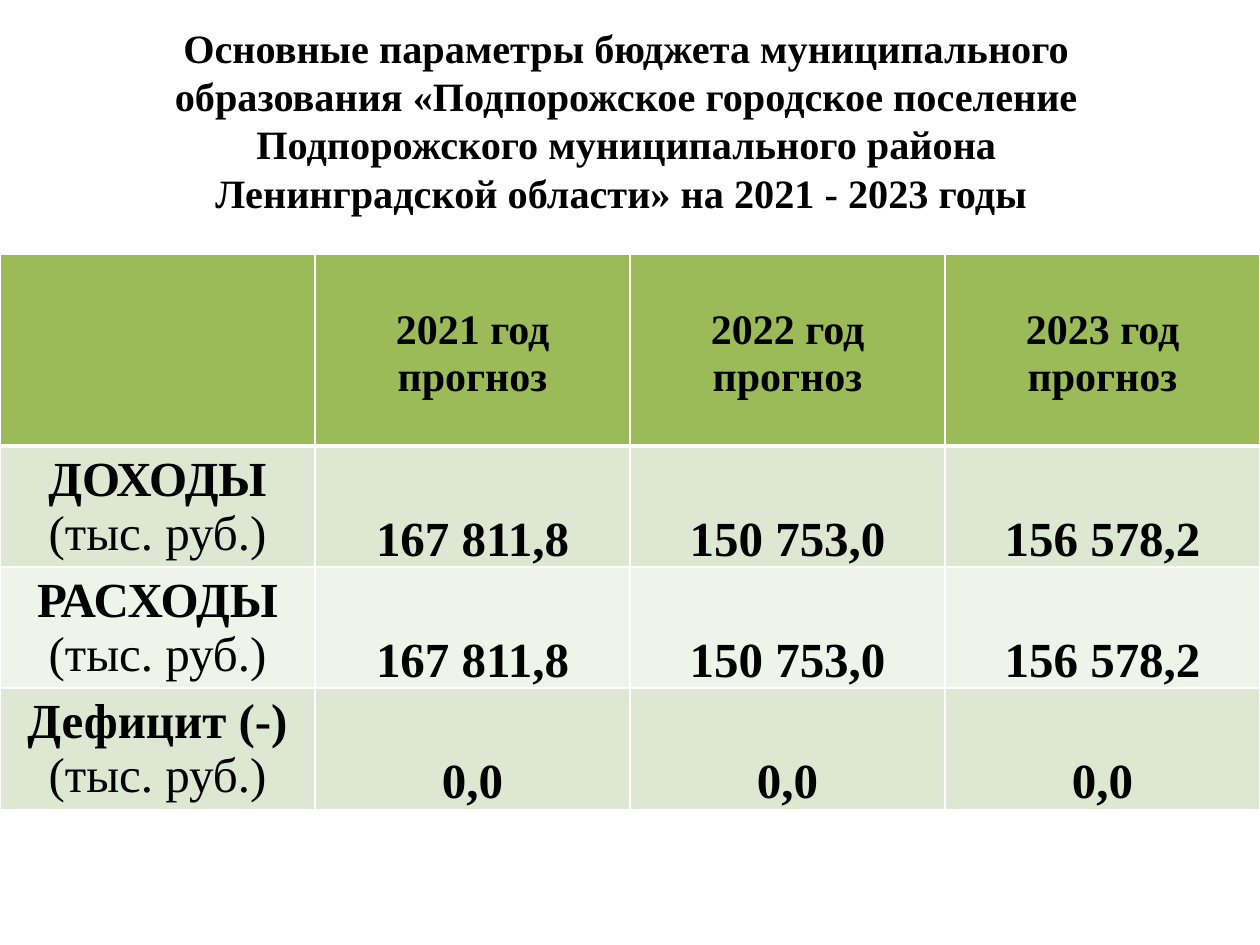
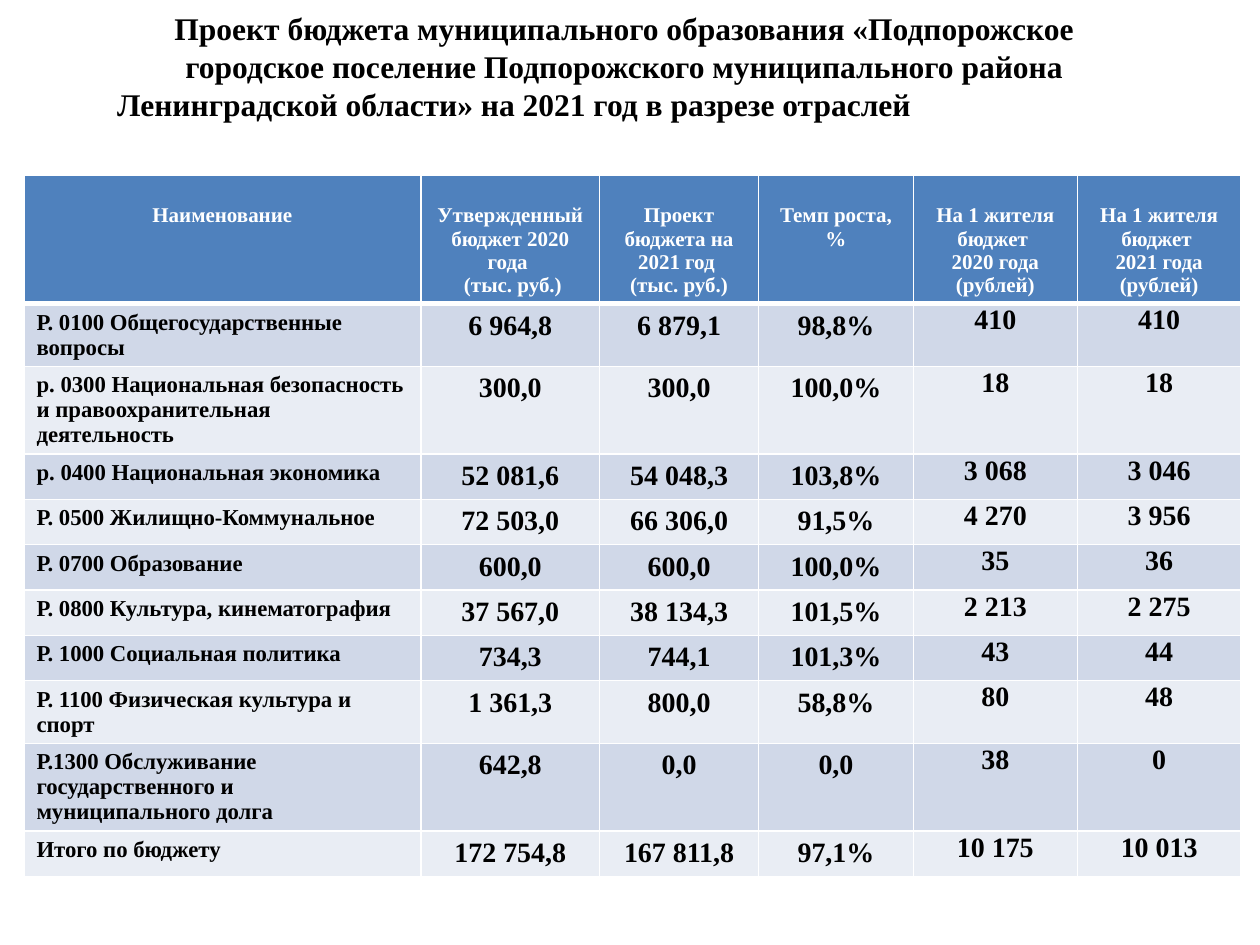
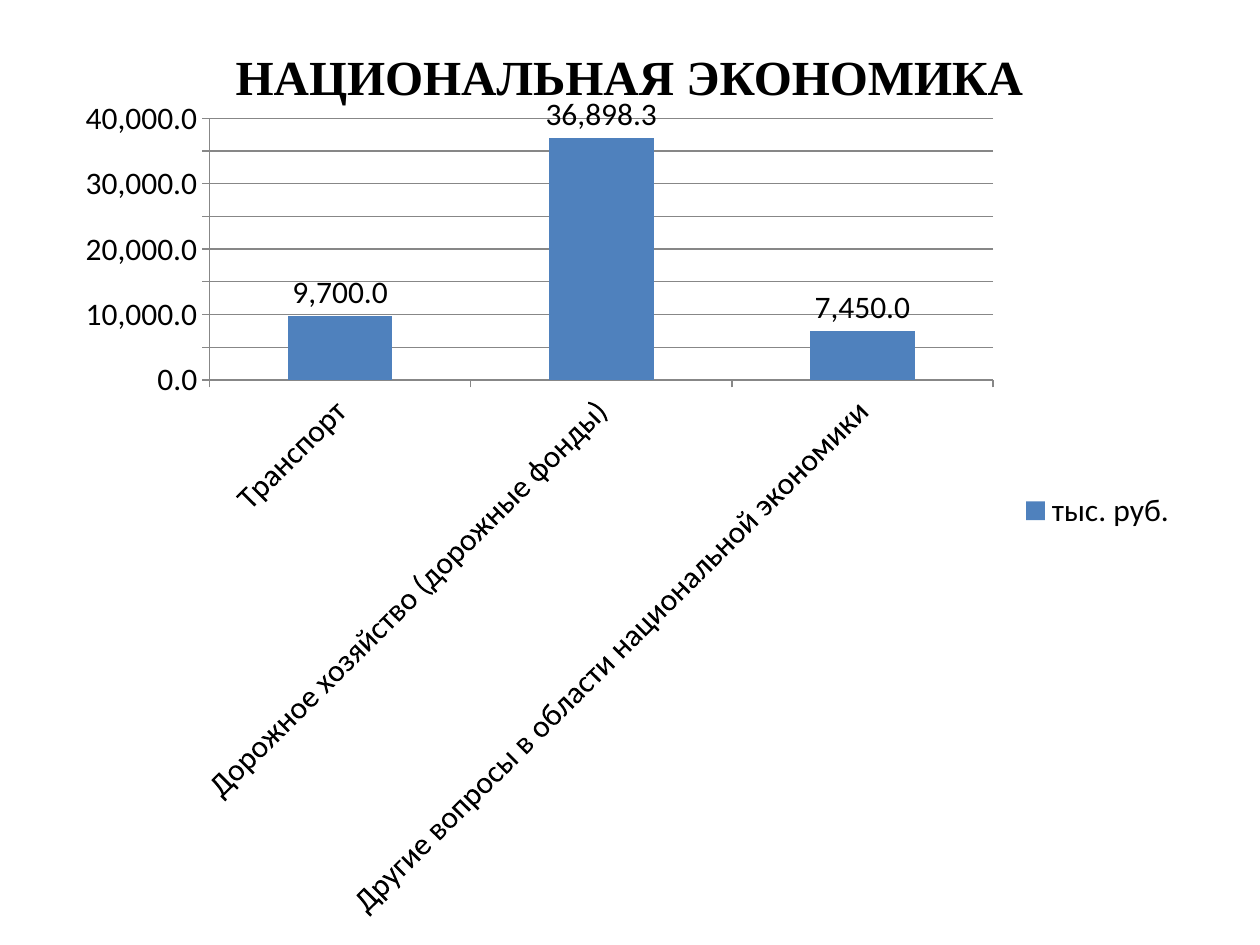
from dataclasses import dataclass

from pptx import Presentation
from pptx.chart.data import CategoryChartData
from pptx.dml.color import RGBColor
from pptx.enum.chart import (XL_CHART_TYPE, XL_LABEL_POSITION,
                             XL_LEGEND_POSITION, XL_TICK_MARK)
from pptx.enum.text import MSO_ANCHOR, MSO_AUTO_SIZE, PP_ALIGN
from pptx.oxml import parse_xml
from pptx.oxml.ns import nsdecls, qn
from pptx.util import Inches, Pt

LEFT, CENTER = PP_ALIGN.LEFT, PP_ALIGN.CENTER
TOP, MIDDLE, BOTTOM = MSO_ANCHOR.TOP, MSO_ANCHOR.MIDDLE, MSO_ANCHOR.BOTTOM
NO_FIT = MSO_AUTO_SIZE.NONE
COLUMN = XL_CHART_TYPE.COLUMN_CLUSTERED
OUT_END = XL_LABEL_POSITION.OUTSIDE_END
RIGHT_KEY = XL_LEGEND_POSITION.RIGHT
TICK_OUT = XL_TICK_MARK.OUTSIDE


@dataclass(frozen=True)
class Theme:
    serif: str = "Times New Roman"
    sans: str = "Calibri"
    black: str = "000000"
    white: str = "FFFFFF"
    green: str = "9BBB59"
    greens: tuple = ("DEE7D1", "EFF3EA")
    blue: str = "4F81BD"
    blues: tuple = ("D0D8E8", "E9EDF4")
    gray: str = "878787"
    big: int = 28
    mid: int = 24
    head: int = 23
    sub: int = 18
    num: int = 16
    name: int = 13
    small: int = 12


T = Theme()
INSET = (0.1, 0.05, 0.1, 0.05)
TIGHT = (0.01, 0.01, 0.01, 0)
FORMAT = "#,##0.0"

# Wording and values
AREA = ("бюджета муниципального образования «Подпорожское городское "
        "поселение Подпорожского муниципального района")
YEARS = ["", "2021 год прогноз", "2022 год прогноз", "2023 год прогноз"]
TOTALS = [
    ["ДОХОДЫ\n(тыс. руб.)", "167 811,8", "150 753,0", "156 578,2"],
    ["РАСХОДЫ\n(тыс. руб.)", "167 811,8", "150 753,0", "156 578,2"],
    ["Дефицит (-)\n(тыс. руб.)", "0,0", "0,0", "0,0"],
]
HEADS = [
    "Наименование",
    "Утвержденный бюджет 2020 года \n (тыс. руб.)",
    "Проект бюджета на 2021 год \n(тыс. руб.)",
    "Темп роста, %",
    "На 1 жителя бюджет \n2020 года (рублей)",
    "На 1 жителя бюджет \n2021 года\n(рублей)",
]
SECTORS = [
    ["Р. 0100 Общегосударственные вопросы",
     "6 964,8", "6 879,1", "98,8%", "410", "410"],
    ["р. 0300 Национальная безопасность и правоохранительная деятельность",
     "300,0", "300,0", "100,0%", "18", "18"],
    ["р. 0400 Национальная экономика",
     "52 081,6", "54 048,3", "103,8%", "3 068", "3 046"],
    ["Р. 0500 Жилищно-Коммунальное",
     "72 503,0", "66 306,0", "91,5%", "4 270", "3 956"],
    ["Р. 0700 Образование", "600,0", "600,0", "100,0%", "35", "36"],
    ["Р. 0800 Культура, кинематография",
     "37 567,0", "38 134,3", "101,5%", "2 213", "2 275"],
    ["Р. 1000 Социальная политика", "734,3", "744,1", "101,3%", "43", "44"],
    ["Р. 1100 Физическая культура и спорт",
     "1 361,3", "800,0", "58,8%", "80", "48"],
    ["Р.1300 Обслуживание государственного и муниципального долга",
     "642,8", "0,0", "0,0", "38", "0"],
    ["Итого по бюджету",
     "172 754,8", "167 811,8", "97,1%", "10 175", "10 013"],
]
COSTS = {
    "Транспорт": 9700,
    "Дорожное хозяйство (дорожные фонды)": 36898.3,
    "Другие вопросы в области национальной экономики": 7450,
}


def rgb(code):
    return RGBColor.from_string(code)


def write(frame, text, size, color=T.black, align=CENTER, lead=False):
    """Fill a frame with bold lines; lead keeps only the first one bold."""
    frame.text = text
    for i, para in enumerate(frame.paragraphs):
        para.alignment = align
        for run in para.runs:
            font = run.font
            font.name, font.size = T.serif, Pt(size)
            font.bold = not (lead and i)
            font.color.rgb = rgb(color)


def title(deck, box, text, size, low=0.05):
    """Add a slide and place its title."""
    slide = deck.slides.add_slide(deck.slide_layouts[5])
    shape = slide.shapes.title
    shape.left, shape.top, shape.width, shape.height = map(Inches, box)
    frame = shape.text_frame
    frame.word_wrap, frame.auto_size = True, NO_FIT
    frame.vertical_anchor = MIDDLE
    frame.margin_bottom = Inches(low)
    write(frame, text, size)
    return slide


def edge(cell, top, base):
    """Draw white cell borders; top and base are widths in points."""
    props = cell._tc.get_or_add_tcPr()
    for i, (side, width) in enumerate(zip("LRTB", (1, 1, top, base))):
        line = parse_xml(f'<a:ln{side} {nsdecls("a")} w="{Pt(width)}">'
                         f'<a:solidFill><a:srgbClr val="{T.white}"/>'
                         f'</a:solidFill></a:ln{side}>')
        props.insert(i, line)


def pad(cell, inset, anchor=TOP):
    (cell.margin_left, cell.margin_top,
     cell.margin_right, cell.margin_bottom) = map(Inches, inset)
    cell.vertical_anchor = anchor


def grid(slide, spot, cols, rows, data, fill, bands, style):
    """Build a table; style(cell, text, row, col) formats each cell."""
    size = sum(cols), sum(rows)
    table = slide.shapes.add_table(len(rows), len(cols),
                                   *map(Inches, spot + size)).table
    table.horz_banding = False
    for col, width in zip(table.columns, cols):
        col.width = Inches(width)
    for r, (row, tall) in enumerate(zip(table.rows, rows)):
        row.height = Inches(tall)
        for c, text in enumerate(data[r]):
            cell = table.cell(r, c)
            cell.fill.solid()
            cell.fill.fore_color.rgb = rgb(bands[(r - 1) % 2] if r else fill)
            edge(cell, 3 if r == 1 else 1, 1 if r else 3)
            style(cell, text, r, c)


def total(cell, text, row, col):
    """Format a cell of the main figures."""
    if not row:
        pad(cell, (0.1, 0.42, 0.1, 0.05))
    elif col:
        pad(cell, TIGHT, BOTTOM)
    else:
        pad(cell, INSET)
    write(cell.text_frame, text, T.big if row else T.mid, lead=True)


def sector(cell, text, row, col):
    """Format a cell of the sector table."""
    if not row:
        pad(cell, (0.1, 0.23, 0.1, 0.05))
        write(cell.text_frame, text, T.small, T.white)
    elif not col:
        pad(cell, INSET)
        write(cell.text_frame, text, T.name, align=LEFT)
    else:
        pad(cell, TIGHT if col > 3 else INSET)
        write(cell.text_frame, text, T.num)


def bars(slide, box):
    """Place the column chart of costs."""
    data = CategoryChartData(number_format=FORMAT)
    data.categories = list(COSTS)
    data.add_series("тыс. руб. ", list(COSTS.values()))
    chart = slide.shapes.add_chart(COLUMN, *map(Inches, box), data).chart
    chart.has_title = False
    chart.font.name, chart.font.size = T.sans, Pt(T.sub)
    chart.font.color.rgb = rgb(T.black)

    # Legend
    chart.has_legend = True
    chart.legend.position = RIGHT_KEY
    chart.legend.include_in_layout = False

    # Columns and labels
    plot = chart.plots[0]
    plot.gap_width, plot.vary_by_categories = 150, False
    fill = plot.series[0].format.fill
    fill.solid()
    fill.fore_color.rgb = rgb(T.blue)
    plot.has_data_labels = True
    tags = plot.data_labels
    tags.show_value, tags.position = True, OUT_END
    tags.number_format, tags.number_format_is_linked = FORMAT, False

    # Axes
    cats, vals = chart.category_axis, chart.value_axis
    vals.has_major_gridlines = True
    vals.minimum_scale, vals.maximum_scale = 0, 40000
    vals.major_unit = 5000
    vals.tick_labels.number_format = FORMAT
    vals.tick_labels.number_format_is_linked = False
    for axis in (cats, vals):
        axis.major_tick_mark = TICK_OUT
    for part in (cats, vals, vals.major_gridlines):
        part.format.line.width = Pt(0.75)
        part.format.line.color.rgb = rgb(T.gray)
    cats.tick_labels.font.size = Pt(T.sub)
    body = cats._element.find(qn("c:txPr")).find(qn("a:bodyPr"))
    body.set("rot", "-2700000")
    body.set("vert", "horz")


def main():
    deck = Presentation()
    deck.slide_width, deck.slide_height = Inches(10), Inches(7.5)

    # Main figures
    slide = title(deck, (0.83, 0.36, 8.29, 1.18),
                  f"Основные параметры {AREA} Ленинградской области» "
                  "на 2021 - 2023 годы ", T.head)
    grid(slide, (0, 2.02), (2.5,) * 4, (1.52,) + (0.96,) * 3,
         [YEARS] + TOTALS, T.green, T.greens, total)

    # Budget by sector
    slide = title(deck, (0.83, 0.13, 8.25, 1.01),
                  f"Проект {AREA}\nЛенинградской области» на 2021 год "
                  "в разрезе отраслей", T.sub, low=0.27)
    slide.shapes.title.text_frame.paragraphs[1].alignment = LEFT
    grid(slide, (0.19, 1.39), (3.15, 1.42, 1.26, 1.23, 1.3, 1.3),
         (1, 0.49, 0.69) + (0.36,) * 5 + (0.49, 0.69, 0.36),
         [HEADS] + SECTORS, T.blue, T.blues, sector)

    # Costs of the national economy
    slide = title(deck, (0.5, 0.3, 8.99, 0.61),
                  "НАЦИОНАЛЬНАЯ ЭКОНОМИКА", T.big)
    bars(slide, (0.5, 0.76, 9, 6.54))

    deck.save("out.pptx")


if __name__ == "__main__":
    main()
